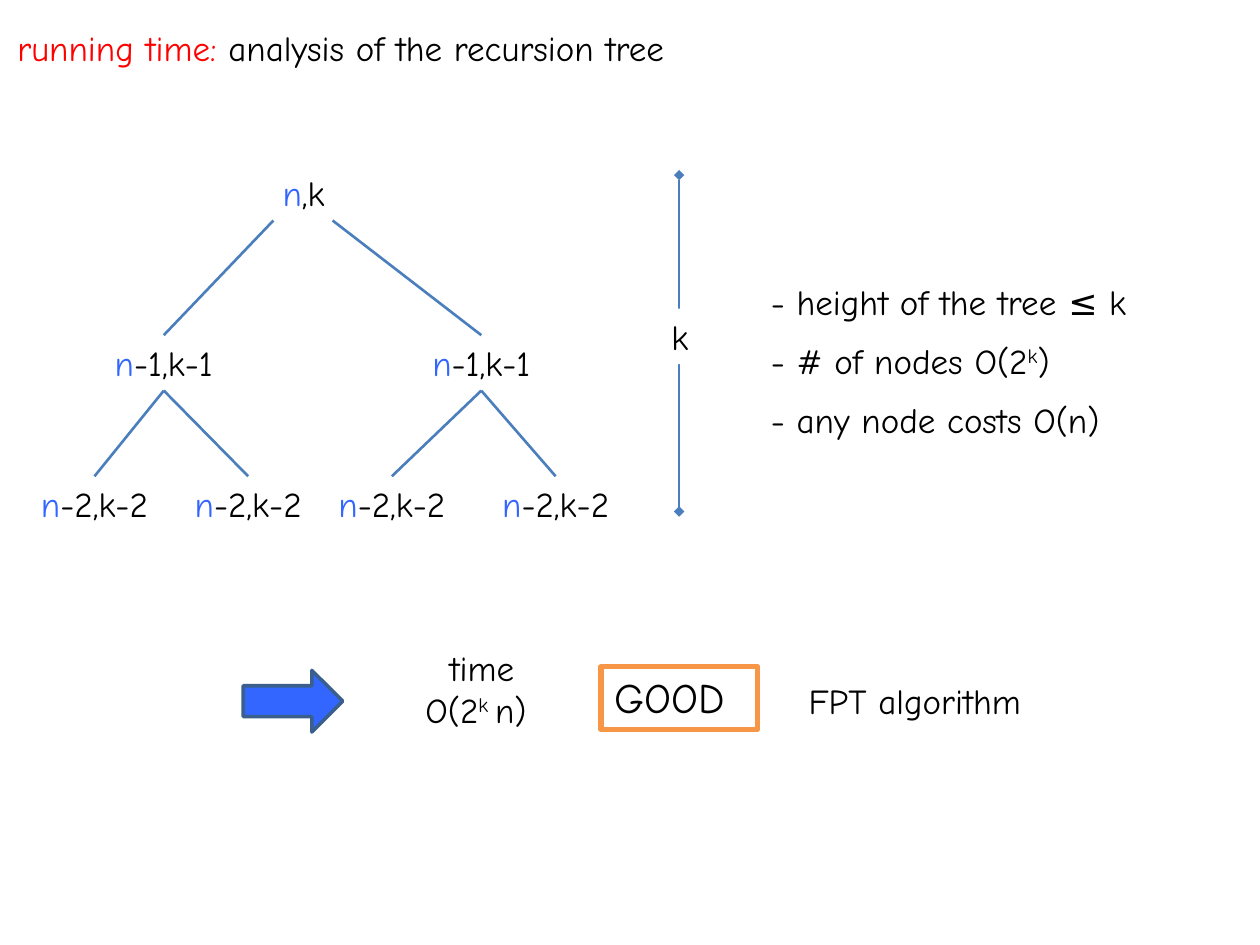
from dataclasses import dataclass

from lxml import etree
from pptx import Presentation
from pptx import util as u
from pptx.dml.color import RGBColor
from pptx.enum import shapes, text
from pptx.oxml import ns


@dataclass(frozen=True)
class Theme:
    font: str = "Comic Neue"
    size: int = 20
    verdict_size: int = 24
    ink: str = "000000"
    accent: str = "FF0000"
    blue: str = "3366FF"
    edge: str = "4B7EBC"
    arrow_line: str = "3A5F8C"
    frame: str = "F79646"
    paper: str = "FFFFFF"


THEME = Theme()
LINE_H = 0.44
SUP = "superscript"

# Runs are (text, style), where style is a colour, SUP or None.
TITLE = [[("running time: ", THEME.accent), ("analysis of the recursion tree", None)]]
FINDINGS = [
    [("- height of the tree ≤ k", None)],
    [("- # of nodes O(2", None), ("k", SUP), (")", None)],
    [("- any node costs O(n)", None)],
]
TIME = [[("time", None)], [("O(2", None), ("k ", SUP), ("n) ", None)]]
VERDICT = [[("GOOD", None)]]
CONCLUSION = [[("FPT algorithm", None)]]
HEIGHT = [[("k", None)]]

# Tree levels: label after "n", top, box width, box centres
LEVELS = [
    (",k", 1.31, 0.63, [2.41]),
    ("-1,k-1", 2.66, 1.1, [1.3, 3.82]),
    ("-2,k-2", 3.78, 1.18, [0.75, 1.97, 3.11, 4.41]),
]
ROOT_EXITS = [2.17, 2.64]

prs = Presentation()
prs.slide_width, prs.slide_height = u.Inches(10), u.Inches(7.5)
slide = prs.slides.add_slide(prs.slide_layouts[6])


def rgb(code):
    return RGBColor.from_string(code)


def write(shape, paragraphs, centred=False, size=THEME.size, wrap=True):
    frame = shape.text_frame
    frame.word_wrap = wrap
    frame.auto_size = text.MSO_AUTO_SIZE.SHAPE_TO_FIT_TEXT
    for i, runs in enumerate(paragraphs):
        para = frame.add_paragraph() if i else frame.paragraphs[0]
        para.alignment = text.PP_ALIGN.CENTER if centred else text.PP_ALIGN.LEFT
        for words, style in runs:
            run = para.add_run()
            run.text = words
            run.font.name, run.font.size = THEME.font, u.Pt(size)
            superscript = style == SUP
            run.font.color.rgb = rgb(THEME.ink if superscript or not style else style)
            if superscript:
                run._r.get_or_add_rPr().set("baseline", "30000")


def add_text(box, paragraphs, **options):
    shape = slide.shapes.add_textbox(*map(u.Inches, box))
    write(shape, paragraphs, **options)
    return shape


def add_shape(kind, box, fill=None, line=None, width=0):
    shape = slide.shapes.add_shape(kind, *map(u.Inches, box))
    shape.shadow.inherit = False
    if fill:
        shape.fill.solid()
        shape.fill.fore_color.rgb = rgb(fill)
    else:
        shape.fill.background()
    if line:
        shape.line.color.rgb, shape.line.width = rgb(line), u.Pt(width)
    else:
        shape.line.fill.background()
    return shape


def add_line(start, end, diamonds=False):
    line = slide.shapes.add_connector(
        shapes.MSO_CONNECTOR.STRAIGHT, *map(u.Inches, (*start, *end)))
    line.line.color.rgb, line.line.width = rgb(THEME.edge), u.Pt(1.5)
    if diamonds:
        for tip in ("a:headEnd", "a:tailEnd"):
            etree.SubElement(line.line._get_or_add_ln(), ns.qn(tip), type="diamond")
    etree.SubElement(line._element.spPr, ns.qn("a:effectLst"))
    return line


def add_tree():
    parents = []
    for label, top, width, centres in LEVELS:
        nodes = []
        for i, centre in enumerate(centres):
            node = add_text((centre - width / 2, top, width, LINE_H),
                            [[("n", THEME.blue), (label, None)]],
                            centred=True, wrap=False)
            nodes.append((node, centre, top + LINE_H))
            if not parents:
                continue
            parent, parent_x, parent_bottom = parents[i // 2]
            from_root = len(parents) == 1
            start_x = ROOT_EXITS[i] if from_root else parent_x
            edge = add_line((start_x, parent_bottom), (centre, top))
            if not from_root:
                edge.begin_connect(parent, 2)
            edge.end_connect(node, 0)
        parents = nodes


add_text((0.04, 0.16, 9.93, LINE_H), TITLE)
add_tree()

add_line((5.39, 1.39), (5.39, 4.06), diamonds=True)
height_label = add_shape(shapes.MSO_SHAPE.RECTANGLE, (5.2, 2.45, 0.39, LINE_H), THEME.paper)
write(height_label, HEIGHT, centred=True, wrap=False)

for row, finding in enumerate(FINDINGS):
    add_text((6.02, 2.18 + row * 0.465, 3.86, LINE_H), [finding])

add_shape(shapes.MSO_SHAPE.RIGHT_ARROW, (1.93, 5.32, 0.79, 0.49),
          THEME.blue, THEME.arrow_line, 2)
add_text((2.86, 5.08, 1.93, 1.11), TIME, centred=True)
add_text((4.78, 5.28, 1.24, 0.5), VERDICT, size=THEME.verdict_size)
add_shape(shapes.MSO_SHAPE.RECTANGLE, (4.77, 5.29, 1.24, 0.5), line=THEME.frame, width=3)
add_text((6.12, 5.34, 2.28, LINE_H), CONCLUSION, centred=True)

prs.save("out.pptx")
